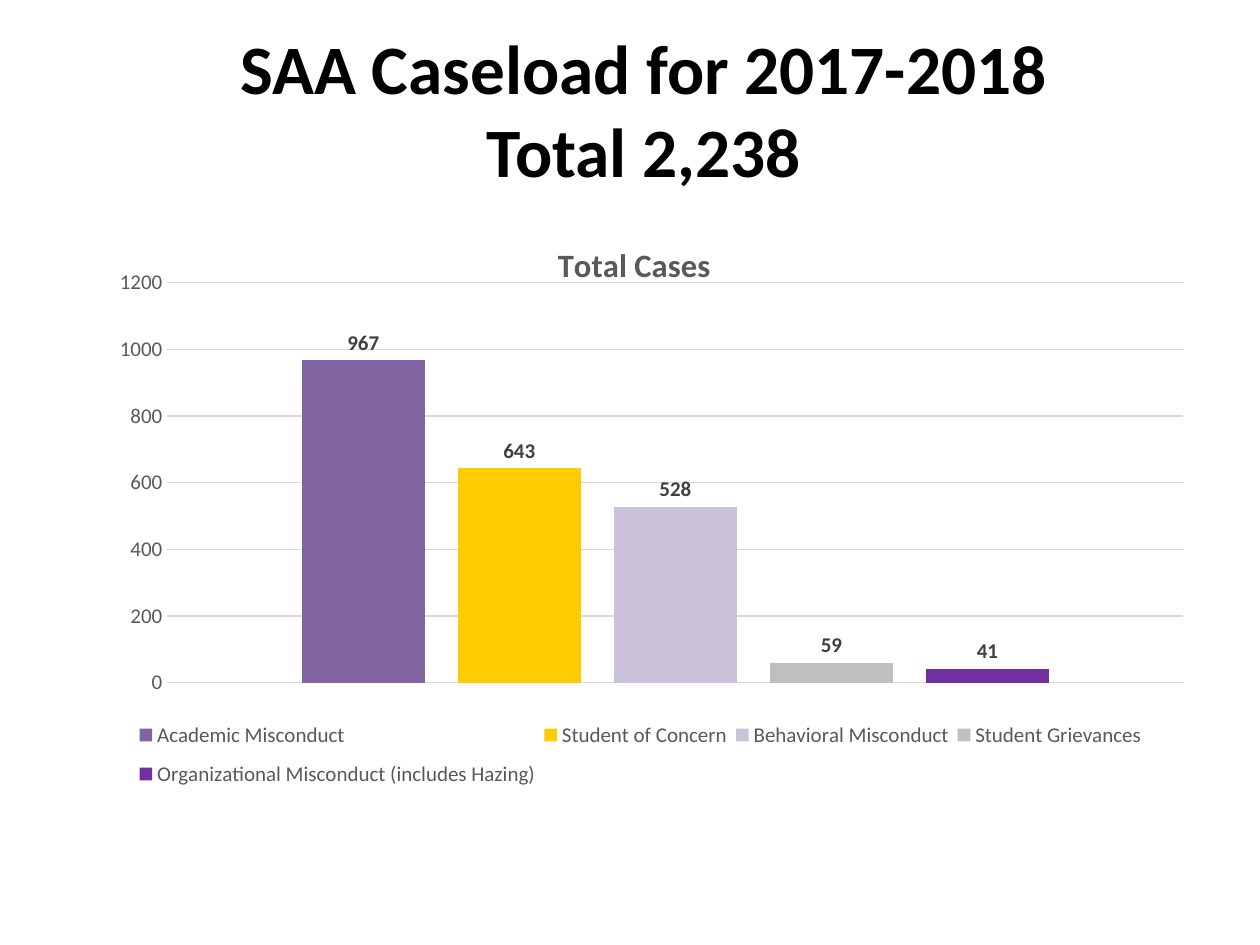
"""Build the yearly caseload slide with its clustered column chart."""
from typing import Any, NamedTuple

from lxml import etree
from pptx import Presentation
from pptx.chart import data as cd
from pptx.dml.color import RGBColor
from pptx.enum import chart as ce, text as te
from pptx.oxml import ns
from pptx.util import Cm, Pt

BLACK = RGBColor(0x00, 0x00, 0x00)
DARK = RGBColor(0x40, 0x40, 0x40)
GREY = RGBColor(0x59, 0x59, 0x59)
GRID = RGBColor(0xD9, 0xD9, 0xD9)
PURPLE = RGBColor(0x80, 0x64, 0xA2)
GOLD = RGBColor(0xFF, 0xCC, 0x00)
LILAC = RGBColor(0xCC, 0xC1, 0xDA)
SILVER = RGBColor(0xBF, 0xBF, 0xBF)
VIOLET = RGBColor(0x70, 0x30, 0xA0)


class Group(NamedTuple):
    name: str
    count: int
    color: RGBColor


GROUPS = [
    Group("Academic Misconduct", 967, PURPLE),
    Group("Student of Concern", 643, GOLD),
    Group("Behavioral Misconduct", 528, LILAC),
    Group("Student Grievances", 59, SILVER),
    Group("Organizational Misconduct (includes Hazing)", 41, VIOLET),
]


def apply(item: Any, **values: Any) -> None:
    for key, value in values.items():
        setattr(item, key, value)


def style(font: Any, size: float, color: RGBColor, bold: bool = False) -> None:
    apply(font, name="Calibri", size=Pt(size), bold=bold)
    font.color.rgb = color


def place(node: Any, index: int, **values: Any) -> None:
    for old in node.findall(ns.qn("c:layout")):
        node.remove(old)
    layout = etree.Element(ns.qn("c:layout"))
    manual = etree.SubElement(layout, ns.qn("c:manualLayout"))
    for key, value in values.items():
        etree.SubElement(manual, ns.qn(f"c:{key}")).set("val", str(value))
    node.insert(index, layout)


def add_title(slide: Any) -> None:
    title = slide.shapes.title
    apply(title, left=Cm(2.03), top=Cm(0.28), width=Cm(21.9), height=Cm(3.81))
    frame = title.text_frame
    frame.text = "SAA Caseload for 2017-2018\vTotal 2,238"
    apply(frame, vertical_anchor=te.MSO_ANCHOR.MIDDLE, word_wrap=True,
          auto_size=te.MSO_AUTO_SIZE.NONE)
    para = frame.paragraphs[0]
    para.alignment = te.PP_ALIGN.CENTER
    for run in para.runs:
        style(run.font, 39.6, BLACK, True)


def add_bars(slide: Any) -> Any:
    data = cd.CategoryChartData()
    data.categories = ["1"]
    for group in GROUPS:
        data.add_series(group.name, [group.count])
    chart = slide.shapes.add_chart(
        ce.XL_CHART_TYPE.COLUMN_CLUSTERED,
        Cm(1.52), Cm(4.14), Cm(22.35), Cm(12.37), data).chart
    style(chart.font, 10, BLACK)
    plot = chart.plots[0]
    apply(plot, gap_width=219, overlap=-27, vary_by_categories=False)
    for group, bar in zip(GROUPS, plot.series):
        bar.format.fill.solid()
        bar.format.fill.fore_color.rgb = group.color
        labels = bar.data_labels
        apply(labels, show_value=True,
              position=ce.XL_LABEL_POSITION.OUTSIDE_END)
        style(labels.font, 12, DARK, True)
    return chart


def set_axes(chart: Any) -> None:
    chart.category_axis.visible = False
    axis = chart.value_axis
    apply(axis, minimum_scale=0, maximum_scale=1200, major_unit=200,
          major_tick_mark=ce.XL_TICK_MARK.NONE,
          minor_tick_mark=ce.XL_TICK_MARK.NONE, has_major_gridlines=True)
    axis.format.line.fill.background()
    style(axis.tick_labels.font, 12, GREY)
    line = axis.major_gridlines.format.line
    line.width = Pt(0.75)
    line.color.rgb = GRID
    place(chart.plots[0]._element.getparent(), 0, layoutTarget="inner",
          xMode="edge", yMode="edge", x=0.083, y=0.126, w=0.917, h=0.652)


def set_text(chart: Any) -> None:
    chart.has_title = True
    head = chart.chart_title
    head.text_frame.text = "Total Cases"
    style(head.text_frame.paragraphs[0].runs[0].font, 18.6, GREY, True)
    place(head._element, 1, xMode="edge", yMode="edge", x=0.43, y=0.05)
    chart.has_legend = True
    legend = chart.legend
    apply(legend, position=ce.XL_LEGEND_POSITION.BOTTOM,
          include_in_layout=False)
    style(legend.font, 12, GREY)
    place(legend._element, 1, xMode="edge", yMode="edge",
          x=0.05, y=0.82, w=0.92, h=0.15)


def main() -> None:
    deck = Presentation()
    apply(deck, slide_width=Cm(25.4), slide_height=Cm(19.05))
    slide = deck.slides.add_slide(deck.slide_layouts[5])
    chart = add_bars(slide)
    set_axes(chart)
    set_text(chart)
    add_title(slide)
    deck.save("out.pptx")


if __name__ == "__main__":
    main()
